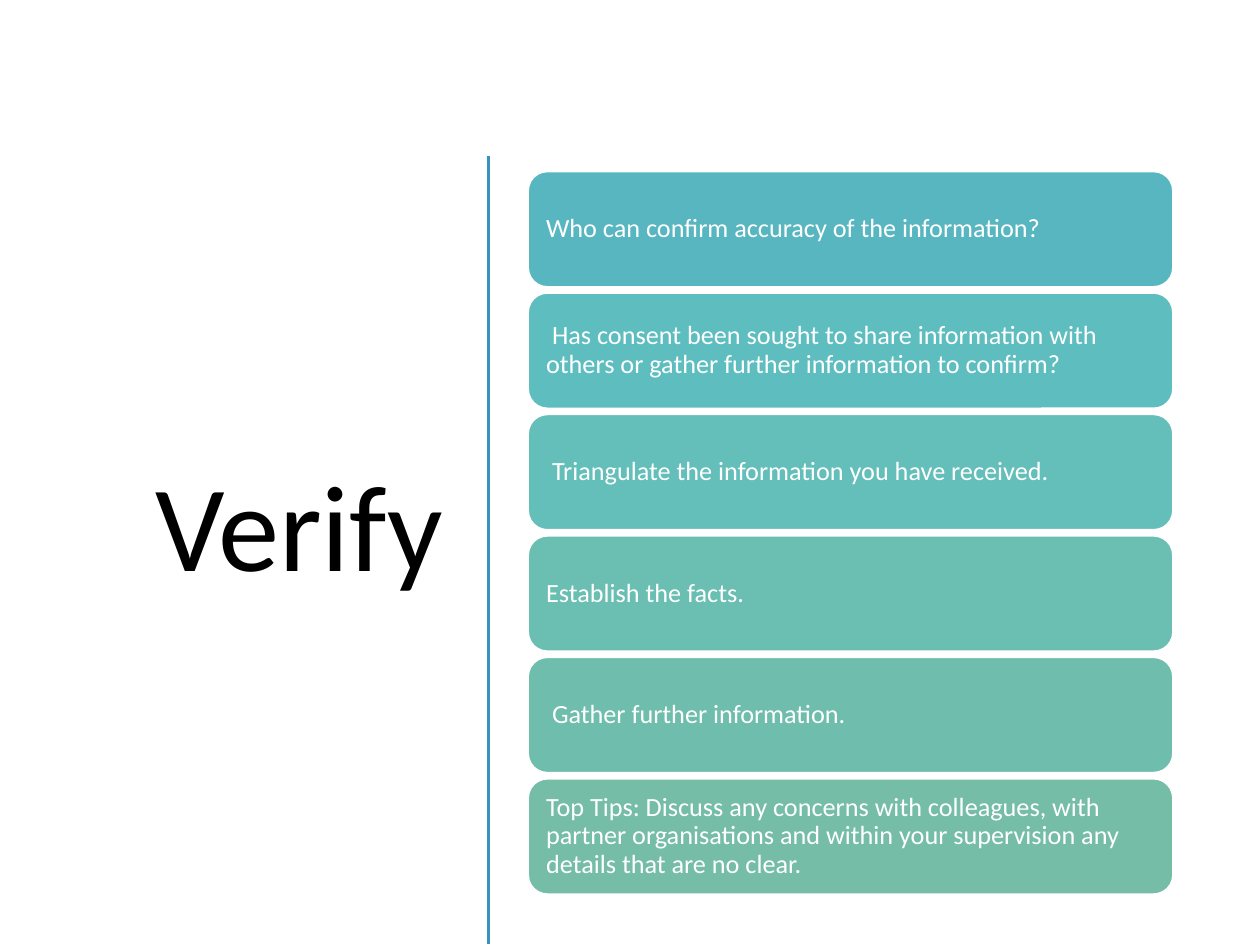
from lxml import etree
from pptx import Presentation
from pptx.dml.color import RGBColor
from pptx.enum.shapes import MSO_CONNECTOR, MSO_SHAPE
from pptx.enum.text import MSO_ANCHOR, MSO_AUTO_SIZE, PP_ALIGN
from pptx.oxml.ns import qn
from pptx.util import Pt

RECT = MSO_SHAPE.RECTANGLE
ROUND = MSO_SHAPE.ROUNDED_RECTANGLE
LINE = MSO_CONNECTOR.STRAIGHT
MIDDLE = MSO_ANCHOR.MIDDLE
FIXED = MSO_AUTO_SIZE.NONE
LEFT = PP_ALIGN.LEFT
RIGHT = PP_ALIGN.RIGHT

COLORS = {"white": "FFFFFF", "black": "000000", "rule": "3494BA"}
CARDS = [
    ("58B6C0", "Who can confirm accuracy of the information?"),
    ("5EBEBF", " Has consent been sought to share information with others "
               "or gather further information to confirm?"),
    ("64BEB9", " Triangulate the information you have received."),
    ("6ABEB2", "Establish the facts."),
    ("6FBDAC", " Gather further information."),
    ("75BDA7", "Top Tips: Discuss any concerns with colleagues, with partner "
               "organisations and within your supervision any details that "
               "are no clear."),
]


def write(frame, text, size=15, color="FFFFFF", align=LEFT, font="Calibri", inset=7.2):
    frame.word_wrap = True
    frame.auto_size = FIXED
    frame.vertical_anchor = MIDDLE
    frame.margin_left = frame.margin_right = Pt(inset)
    frame.margin_top = frame.margin_bottom = Pt(inset)
    para = frame.paragraphs[0]
    para.alignment = align
    para.line_spacing = 0.9
    run = para.add_run()
    run.text = text
    run.font.name = font
    run.font.size = Pt(size)
    run.font.color.rgb = RGBColor.from_string(color)


class Deck:
    def __init__(self, width, height):
        self.show = Presentation()
        self.show.slide_width = Pt(width)
        self.show.slide_height = Pt(height)
        self.slide = self.show.slides.add_slide(self.show.slide_layouts[5])

    def title(self, text, x, y, w, h):
        shape = self.slide.shapes.title
        shape.left, shape.top, shape.width, shape.height = map(Pt, (x, y, w, h))
        write(shape.text_frame, text, size=70, color=COLORS["black"], align=RIGHT)

    def box(self, kind, x, y, w, h, fill):
        shape = self.slide.shapes.add_shape(kind, *map(Pt, (x, y, w, h)))
        shape.shadow.inherit = False
        shape.fill.solid()
        shape.fill.fore_color.rgb = RGBColor.from_string(fill)
        return shape

    def panel(self, w, h):
        shape = self.box(RECT, 0, 0, w, h, COLORS["white"])
        shape.line.fill.background()
        self.slide.shapes.title.element.addprevious(shape.element)

    def card(self, text, x, y, w, h, fill):
        shape = self.box(ROUND, x, y, w, h, fill)
        shape.line.color.rgb = RGBColor.from_string(COLORS["white"])
        shape.line.width = Pt(1)
        write(shape.text_frame, text)

    def rule(self, x, top, end):
        line = self.slide.shapes.add_connector(LINE, Pt(x), Pt(top), Pt(x), Pt(end))
        line.line.color.rgb = RGBColor.from_string(COLORS["rule"])
        line.line.width = Pt(2)
        etree.SubElement(line.element.spPr, qn("a:effectLst"))


def main():
    deck = Deck(720, 540)
    deck.panel(720, 540)
    deck.title("Verify", 28, 84, 232.6, 440)
    deck.rule(279.2, 89, 539.5)
    for row, (fill, text) in enumerate(CARDS):
        deck.card(text, 301.8, 98 + row * 69.4, 368.5, 66, fill)
    deck.show.save("out.pptx")


if __name__ == "__main__":
    main()
